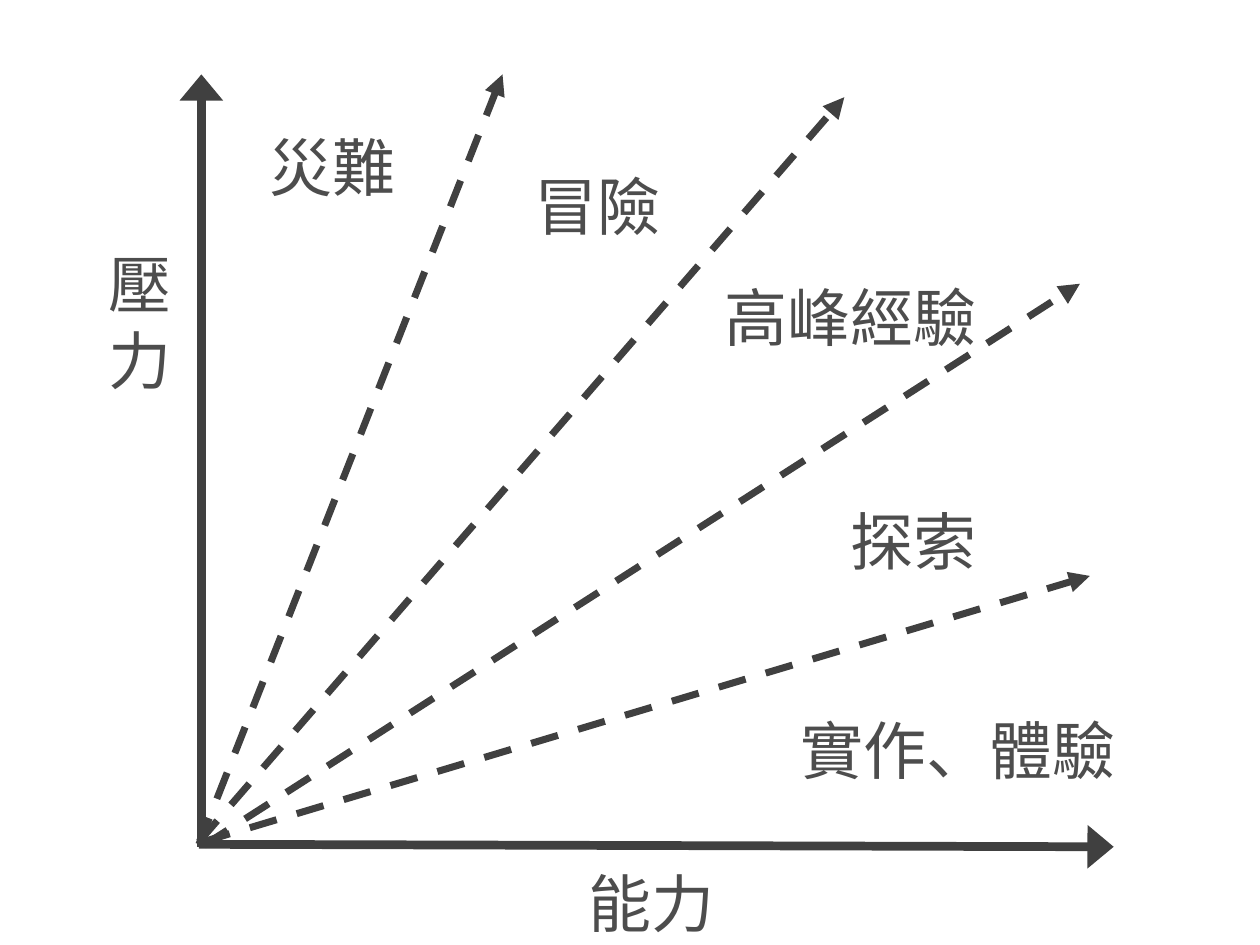
from dataclasses import dataclass

from lxml.etree import SubElement
from pptx import Presentation
from pptx.dml.color import RGBColor
from pptx.enum.dml import MSO_LINE_DASH_STYLE as Dash
from pptx.enum.shapes import MSO_CONNECTOR as Connector
from pptx.enum.text import MSO_AUTO_SIZE as AutoSize
from pptx.oxml.ns import qn
from pptx.slide import Slide
from pptx.util import Cm, Pt


@dataclass(frozen=True)
class Theme:
    line: RGBColor = RGBColor(0x40, 0x40, 0x40)
    text: RGBColor = RGBColor(0x4D, 0x4D, 0x4D)
    font: str = "DejaVu Sans"
    text_size: float = 36
    axis_width: float = 5
    ray_width: float = 4


@dataclass(frozen=True)
class Arrow:
    """An arrow from (x1, y1) to its head at (x2, y2), in centimetres."""
    x1: float
    y1: float
    x2: float
    y2: float


@dataclass(frozen=True)
class Label:
    """A text box, in centimetres."""
    text: str
    left: float
    top: float
    width: float
    height: float = 1.85
    wrap: bool = False


THEME = Theme()

AXES = [
    Arrow(4.06, 17.07, 4.06, 1.5),
    Arrow(4.01, 17.02, 22.45, 17.07),
]

# Boundaries between the zones, from steep to flat
RAYS = [
    Arrow(4.01, 17.02, 10.13, 1.5),
    Arrow(4.01, 16.97, 17.02, 1.96),
    Arrow(4.11, 17.04, 21.77, 5.72),
    Arrow(4.09, 16.97, 21.97, 11.61),
]

LABELS = [
    # Zones
    Label("實作、體驗", 15.88, 14.22, 7.06),
    Label("探索", 16.89, 10.01, 3.15),
    Label("高峰經驗", 14.35, 5.49, 5.74),
    Label("冒險", 10.52, 3.25, 3.15),
    Label("災難", 5.18, 2.46, 3.15),
    # Axis titles
    Label("壓力", 1.93, 4.83, 1.7, 3.43, wrap=True),
    Label("能力", 11.61, 17.3, 3.15),
]


def draw_arrow(slide: Slide, arrow: Arrow, *, width: float,
               head_width: str = "med", dashed: bool = False) -> None:
    connector = slide.shapes.add_connector(
        Connector.STRAIGHT, Cm(arrow.x1), Cm(arrow.y1), Cm(arrow.x2), Cm(arrow.y2))
    line = connector.line
    line.color.rgb = THEME.line
    line.width = Pt(width)
    if dashed:
        line.dash_style = Dash.DASH
    properties = connector.element.spPr
    SubElement(properties.find(qn("a:ln")), qn("a:tailEnd"),
               type="triangle", w=head_width, len="med")
    SubElement(properties, qn("a:effectLst"))


def draw_label(slide: Slide, label: Label) -> None:
    box = slide.shapes.add_textbox(
        Cm(label.left), Cm(label.top), Cm(label.width), Cm(label.height))
    frame = box.text_frame
    frame.word_wrap = label.wrap
    frame.auto_size = AutoSize.SHAPE_TO_FIT_TEXT
    run = frame.paragraphs[0].add_run()
    run.text = label.text
    run.font.name = THEME.font
    run.font.size = Pt(THEME.text_size)
    run.font.color.rgb = THEME.text


def main() -> None:
    presentation = Presentation()
    presentation.slide_width, presentation.slide_height = Cm(25.4), Cm(19.05)
    blank_layout = presentation.slide_layouts[6]
    slide = presentation.slides.add_slide(blank_layout)

    for axis in AXES:
        draw_arrow(slide, axis, width=THEME.axis_width, head_width="lg")
    for ray in RAYS:
        draw_arrow(slide, ray, width=THEME.ray_width, dashed=True)
    for label in LABELS:
        draw_label(slide, label)

    presentation.save("out.pptx")


if __name__ == "__main__":
    main()
